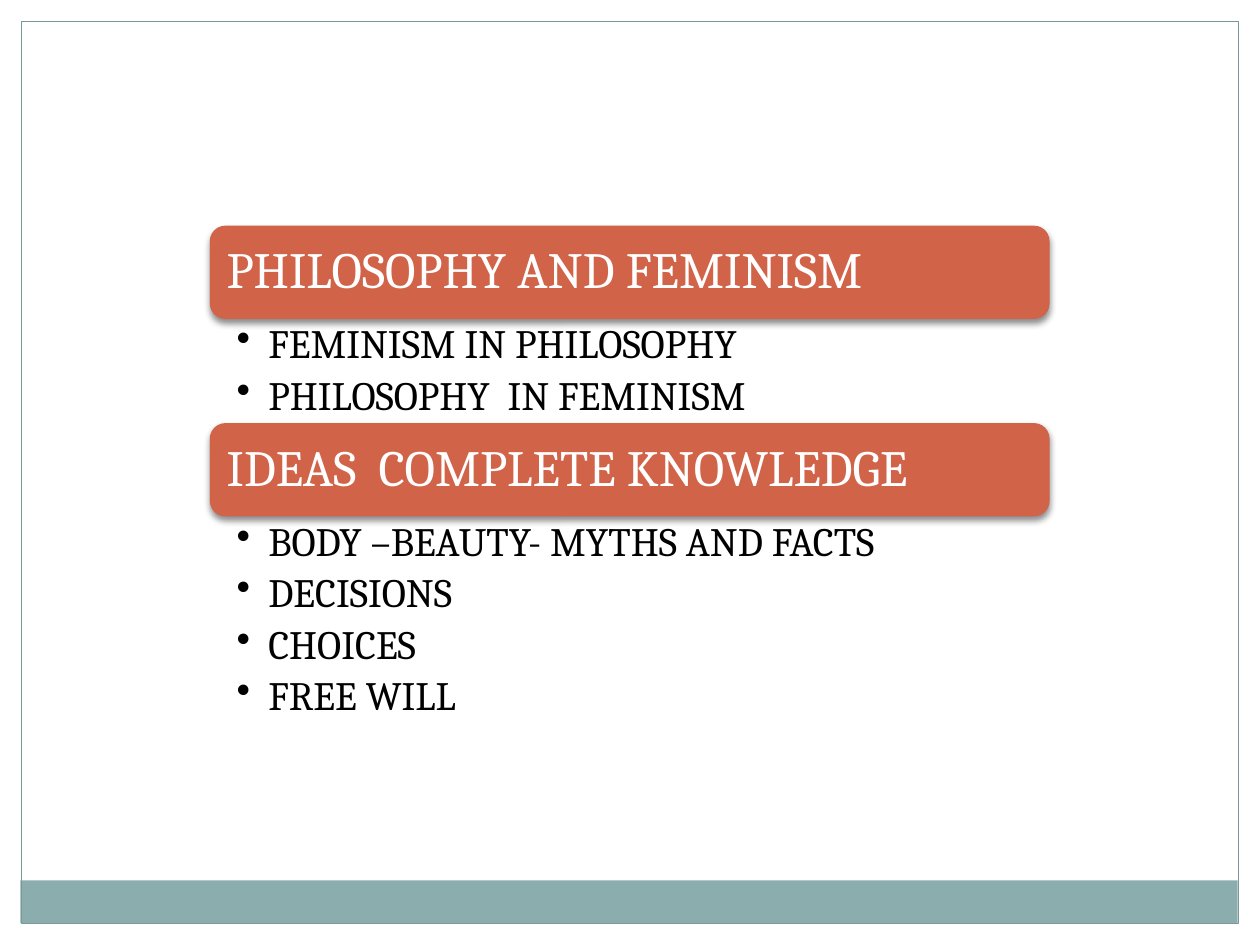
from lxml.etree import SubElement
from pptx import Presentation
from pptx.dml.color import RGBColor
from pptx.enum.shapes import MSO_SHAPE as Shape
from pptx.enum.text import MSO_ANCHOR as Anchor, PP_ALIGN as Align
from pptx.oxml.ns import qn
from pptx.util import Cm, Pt

SECTIONS = [
    ("PHILOSOPHY AND FEMINISM",
     ["FEMINISM IN PHILOSOPHY", "PHILOSOPHY  IN FEMINISM"]),
    ("IDEAS  COMPLETE KNOWLEDGE",
     ["BODY –BEAUTY- MYTHS AND FACTS", "DECISIONS", "CHOICES", "FREE WILL"]),
]
COLORS = {"band": "8CADAE", "frame": "7C999A", "bar": "D16349",
          "heading": "FFFFFF", "body": "000000", "shadow": "000000"}
FONT = "Cambria"

# Lengths in centimetres
LEFT, WIDTH = 4.23, 16.93
FIRST_TOP, BAR_HEIGHT = 4.55, 1.88
LINE_HEIGHT, LIST_PADDING = 1.0, 0.1
INDENT = 0.64


def color(name):
    return RGBColor.from_string(COLORS[name])


def add_panel(page, kind, box, fill=None, line=None):
    panel = page.shapes.add_shape(kind, *map(Cm, box))
    panel.shadow.inherit = False
    if fill:
        panel.fill.solid()
        panel.fill.fore_color.rgb = color(fill)
    else:
        panel.fill.background()
    if line:
        panel.line.color.rgb = color(line)
        panel.line.width = Pt(0.75)
    else:
        panel.line.fill.background()
    return panel


def add_soft_shadow(shape):
    effects = shape._element.spPr.find(qn("a:effectLst"))
    shadow = SubElement(effects, qn("a:outerShdw"), blurRad=str(Pt(4)),
                        dist=str(Pt(2)), dir="5400000", rotWithShape="0")
    tint = SubElement(shadow, qn("a:srgbClr"), val=COLORS["shadow"])
    SubElement(tint, qn("a:alpha"), val="45000")


def set_margins(frame, left, top, right, bottom):
    frame.word_wrap = True
    frame.margin_left, frame.margin_top = Cm(left), Cm(top)
    frame.margin_right, frame.margin_bottom = Cm(right), Cm(bottom)


def style(para, size, ink, after):
    """Set font and spacing; after is a percentage of the line."""
    para.alignment = Align.LEFT
    para.font.name = FONT
    para.font.size = Pt(size)
    para.font.color.rgb = color(ink)
    para.line_spacing = 0.9
    spacing = SubElement(para._p.get_or_add_pPr(), qn("a:spcAft"))
    SubElement(spacing, qn("a:spcPct"), val=str(after * 1000))
    # The default run properties come last in the paragraph properties
    props = para._p.pPr
    props.append(props.find(qn("a:defRPr")))


def add_bullet(para):
    props = para._p.pPr
    props.set("marL", str(Cm(INDENT)))
    props.set("indent", str(-Cm(INDENT)))
    bullet = SubElement(props, qn("a:buChar"), char="•")
    props.find(qn("a:defRPr")).addprevious(bullet)


def add_heading(page, text, top):
    bar = add_panel(page, Shape.ROUNDED_RECTANGLE,
                    (LEFT, top, WIDTH, BAR_HEIGHT), fill="bar")
    add_soft_shadow(bar)
    frame = bar.text_frame
    set_margins(frame, 0.25, 0.3, 0.25, 0.3)
    frame.vertical_anchor = Anchor.MIDDLE
    para = frame.paragraphs[0]
    para.text = text
    style(para, 29, "heading", 35)


def add_list(page, items, top, height):
    box = page.shapes.add_textbox(*map(Cm, (LEFT, top, WIDTH, height)))
    frame = box.text_frame
    set_margins(frame, 0.54, 0.1, 0.6, 0.1)
    frame.text = "\n".join(items)
    for para in frame.paragraphs:
        para.level = 1
        style(para, 23, "body", 20)
        add_bullet(para)


def main():
    deck = Presentation()
    deck.slide_width, deck.slide_height = Cm(25.4), Cm(19.05)
    page = deck.slides.add_slide(deck.slide_layouts[6])

    add_panel(page, Shape.RECTANGLE, (0.41, 17.75, 24.54, 0.86), fill="band")
    add_panel(page, Shape.RECTANGLE, (0.43, 0.43, 24.54, 18.19), line="frame")

    top = FIRST_TOP
    for heading, items in SECTIONS:
        add_heading(page, heading, top)
        top += BAR_HEIGHT
        height = len(items) * LINE_HEIGHT + LIST_PADDING
        add_list(page, items, top, height)
        top += height

    deck.save("out.pptx")


if __name__ == "__main__":
    main()
